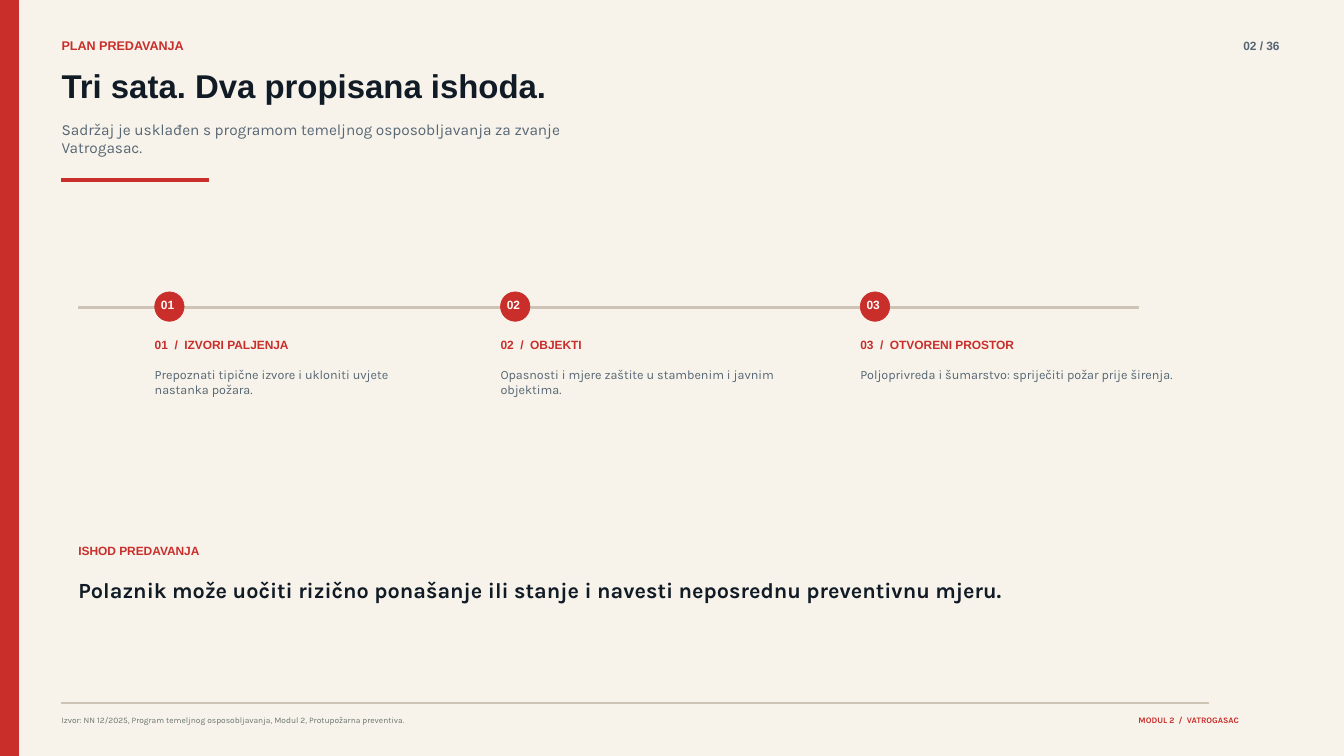
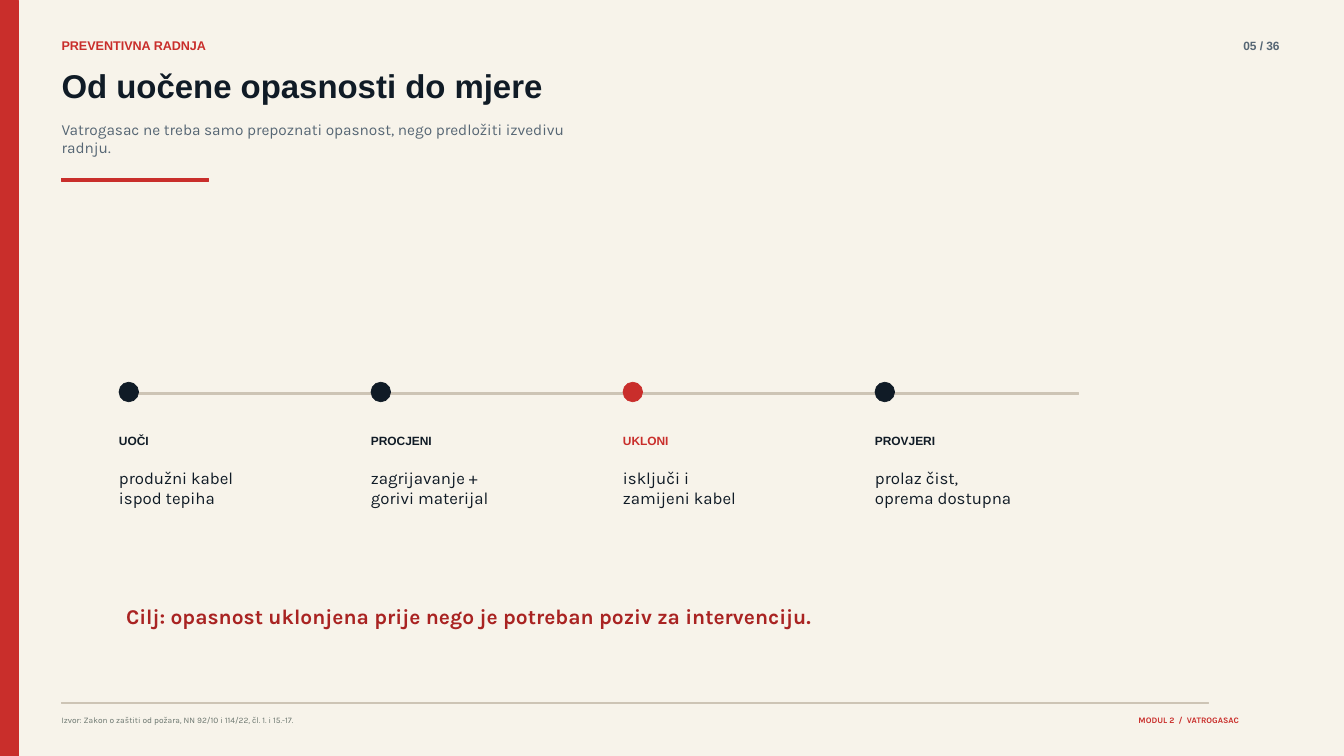
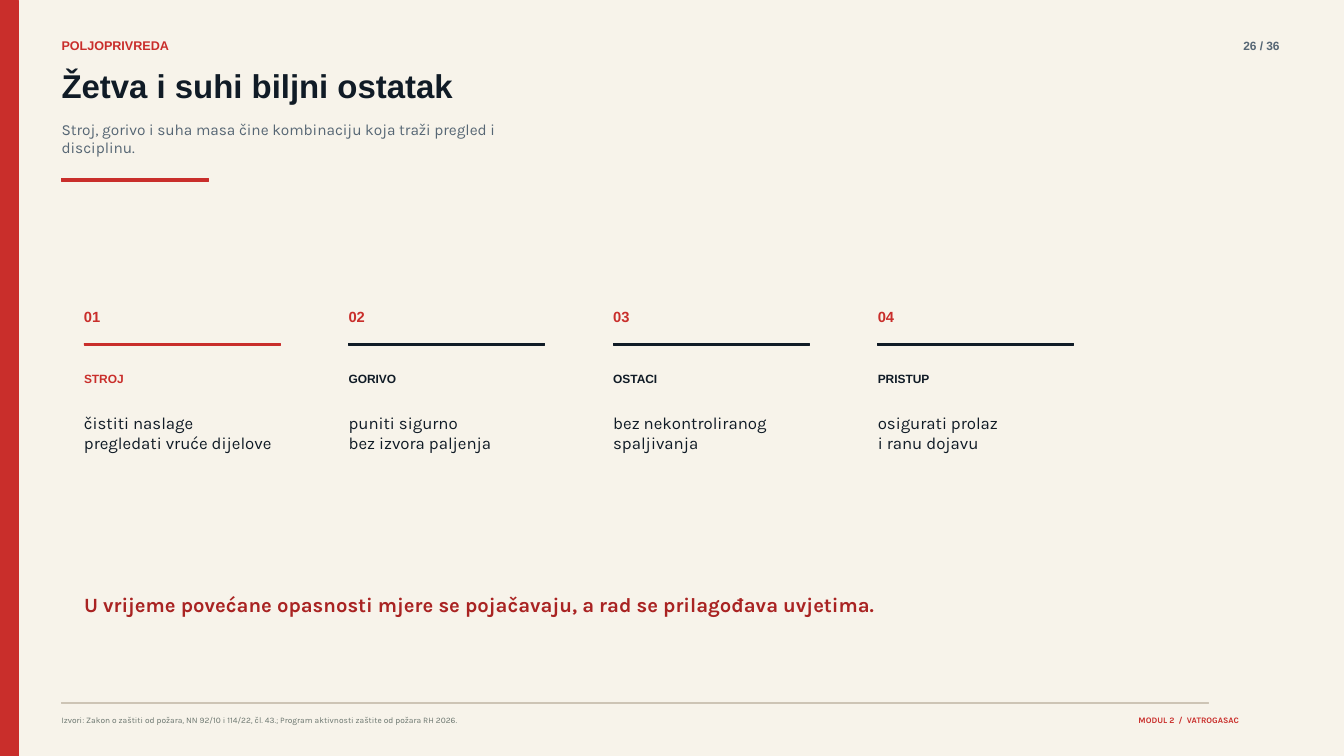
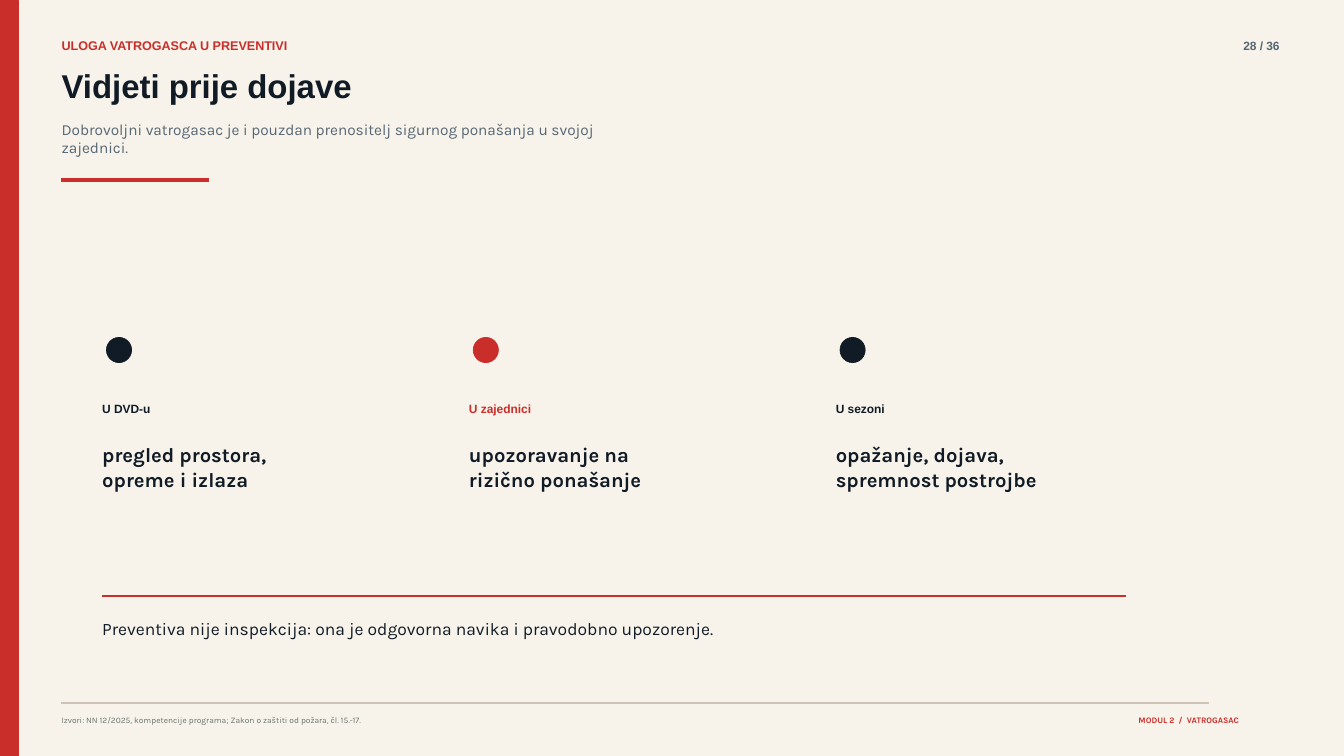
from pptx import Presentation
from pptx.dml.color import RGBColor
from pptx.enum.shapes import MSO_SHAPE
from pptx.enum.text import MSO_ANCHOR, MSO_AUTO_SIZE, PP_ALIGN
from pptx.util import Emu, Pt

EMU_PER_PX = 9525
WIDTH, HEIGHT = 1920, 1080
MARGIN = 88
SUBTITLE_TOP, SUBTITLE_HEIGHT = 171, 66
TITLE_ONLY = 5

RED = "C92E2B"
DARK_RED = "A92322"
INK = "101B26"
SLATE = "566674"
SAND = "CDC4B5"
SOURCE_GREY = "6A756E"
PAPER = "F7F3EA"
WHITE = "FCFBF8"

HEADING_FONT = "Arial"
BODY_FONT = "Karla"
LABEL_SIZE = 12.75


def px(length):
    return Emu(length * EMU_PER_PX)


def color(hex_string):
    return RGBColor.from_string(hex_string)


class Deck:
    """Holds the presentation, its style and the slide being built."""

    def __init__(self):
        self.presentation = Presentation()
        self.presentation.slide_width = px(WIDTH)
        self.presentation.slide_height = px(HEIGHT)
        self.slide = None

    def new_slide(self, number, kicker, title, subtitle, subtitle_width, source):
        """Start a slide with the shared band, header and footer."""
        layout = self.presentation.slide_layouts[TITLE_ONLY]
        self.slide = self.presentation.slides.add_slide(layout)
        background = self.slide.background.fill
        background.solid()
        background.fore_color.rgb = color(PAPER)

        self.shape(0, 0, 26, HEIGHT, RED)
        self.label(MARGIN, 54, 1150, 22, kicker, RED, 13.5)
        self.label(1688, 55, 140, 20, f"{number:02} / 36", SLATE, align=PP_ALIGN.RIGHT)
        self.title(title)
        self.text(MARGIN, SUBTITLE_TOP, subtitle_width, SUBTITLE_HEIGHT,
                  subtitle, 16.5, SLATE)
        self.shape(MARGIN, SUBTITLE_TOP + SUBTITLE_HEIGHT + 18, 210, 4, RED)

        self.shape(MARGIN, 1004, 1638, 1, SAND)
        self.text(MARGIN, 1022, 1410, 15, source, 9, SOURCE_GREY)
        self.text(1510, 1022, 260, 15, "MODUL 2  /  VATROGASAC", 9, RED,
                  bold=True, align=PP_ALIGN.RIGHT)

    def shape(self, left, top, width, height, fill, kind=MSO_SHAPE.RECTANGLE):
        shape = self.slide.shapes.add_shape(
            kind, px(left), px(top), px(width), px(height))
        shape.shadow.inherit = False
        shape.fill.solid()
        shape.fill.fore_color.rgb = color(fill)
        shape.line.color.rgb = color(fill)
        shape.line.width = 0

    def dot(self, left, top, diameter, fill):
        self.shape(left, top, diameter, diameter, fill, MSO_SHAPE.OVAL)

    def title(self, content):
        placeholder = self.slide.shapes.title
        placeholder.left, placeholder.top = px(MARGIN), px(94)
        placeholder.width, placeholder.height = px(1740), px(60)
        self.fill_frame(placeholder.text_frame, content, 35.25, INK,
                        HEADING_FONT, True, PP_ALIGN.LEFT)

    def text(self, left, top, width, height, content, size, ink,
             font=BODY_FONT, bold=False, align=PP_ALIGN.LEFT):
        box = self.slide.shapes.add_textbox(
            px(left), px(top), px(width), px(height))
        self.fill_frame(box.text_frame, content, size, ink, font, bold, align)

    def label(self, left, top, width, height, content, ink,
              size=LABEL_SIZE, align=PP_ALIGN.LEFT):
        self.text(left, top, width, height, content, size, ink,
                  HEADING_FONT, True, align)

    def fill_frame(self, frame, content, size, ink, font, bold, align):
        """Write each line of content as one paragraph in a frame without insets."""
        frame.word_wrap = True
        frame.auto_size = MSO_AUTO_SIZE.NONE
        frame.vertical_anchor = MSO_ANCHOR.TOP
        frame.margin_left = frame.margin_right = 0
        frame.margin_top = frame.margin_bottom = 0
        for index, line in enumerate(content.split("\n")):
            paragraph = frame.add_paragraph() if index else frame.paragraphs[0]
            paragraph.alignment = align
            run = paragraph.add_run()
            run.text = line
            run.font.name = font
            run.font.size = Pt(size)
            run.font.bold = bold
            run.font.color.rgb = color(ink)


def lecture_plan(deck):
    deck.new_slide(
        2, "PLAN PREDAVANJA", "Tri sata. Dva propisana ishoda.",
        "Sadržaj je usklađen s programom temeljnog osposobljavanja za zvanje Vatrogasac.",
        800,
        "Izvor: NN 12/2025, Program temeljnog osposobljavanja, Modul 2, Protupožarna preventiva.")
    topics = [
        (221, 390, 56, "IZVORI PALJENJA",
         "Prepoznati tipične izvore i ukloniti uvjete nastanka požara."),
        (715, 420, 56, "OBJEKTI",
         "Opasnosti i mjere zaštite u stambenim i javnim objektima."),
        (1229, 450, 28, "OTVORENI PROSTOR",
         "Poljoprivreda i šumarstvo: spriječiti požar prije širenja."),
    ]
    deck.shape(112, 438, 1514, 2, SAND)
    for number, (left, width, height, name, detail) in enumerate(topics, 1):
        deck.dot(left, 417, 42, RED)
        deck.label(left + 9, 425, 34, 21, f"{number:02}", WHITE)
        deck.label(left, 483, width, 21, f"{number:02}  /  {name}", RED)
        deck.text(left, 524, width, height, detail, 13.5, SLATE)
    deck.label(112, 776, 300, 21, "ISHOD PREDAVANJA", RED)
    deck.text(112, 824, 1430, 45,
              "Polaznik može uočiti rizično ponašanje ili stanje i navesti "
              "neposrednu preventivnu mjeru.", 23.25, INK, bold=True)


def hazard_to_measure(deck):
    deck.new_slide(
        5, "PREVENTIVNA RADNJA", "Od uočene opasnosti do mjere",
        "Vatrogasac ne treba samo prepoznati opasnost, nego predložiti izvedivu radnju.",
        771,
        "Izvor: Zakon o zaštiti od požara, NN 92/10 i 114/22, čl. 1. i 15.-17.")
    steps = [
        ("UOČI", "produžni kabel\nispod tepiha", INK),
        ("PROCJENI", "zagrijavanje +\ngorivi materijal", INK),
        ("UKLONI", "isključi i\nzamijeni kabel", RED),
        ("PROVJERI", "prolaz čist,\noprema dostupna", INK),
    ]
    deck.shape(180, 560, 1360, 3, SAND)
    for index, (name, example, accent) in enumerate(steps):
        left = 170 + 360 * index
        deck.dot(left, 546, 28, accent)
        deck.label(left, 620, 275, 21, name, accent)
        deck.text(left, 668, 275, 75, example, 18, INK)
    deck.text(180, 862, 1380, 44,
              "Cilj: opasnost uklonjena prije nego je potreban poziv za intervenciju.",
              22.5, DARK_RED, bold=True)


def harvest(deck):
    deck.new_slide(
        26, "POLJOPRIVREDA", "Žetva i suhi biljni ostatak",
        "Stroj, gorivo i suha masa čine kombinaciju koja traži pregled i disciplinu.",
        695,
        "Izvori: Zakon o zaštiti od požara, NN 92/10 i 114/22, čl. 43.; "
        "Program aktivnosti zaštite od požara RH 2026.")
    measures = [
        ("STROJ", "čistiti naslage\npregledati vruće dijelove", RED),
        ("GORIVO", "puniti sigurno\nbez izvora paljenja", INK),
        ("OSTACI", "bez nekontroliranog\nspaljivanja", INK),
        ("PRISTUP", "osigurati prolaz\ni ranu dojavu", INK),
    ]
    for index, (name, action, accent) in enumerate(measures):
        left = 120 + 378 * index
        deck.label(left, 440, 70, 26, f"{index + 1:02}", RED, 15.75)
        deck.shape(left, 490, 280, 3, accent)
        deck.label(left, 531, 286, 21, name, accent)
        deck.text(left, 590, 310, 75, action, 18, INK)
    deck.text(120, 846, 1420, 42,
              "U vrijeme povećane opasnosti mjere se pojačavaju, "
              "a rad se prilagođava uvjetima.", 21.75, DARK_RED, bold=True)


def firefighter_role(deck):
    deck.new_slide(
        28, "ULOGA VATROGASCA U PREVENTIVI", "Vidjeti prije dojave",
        "Dobrovoljni vatrogasac je i pouzdan prenositelj sigurnog ponašanja "
        "u svojoj zajednici.",
        830,
        "Izvori: NN 12/2025, kompetencije programa; Zakon o zaštiti od požara, čl. 15.-17.")
    roles = [
        ("U DVD-u", "pregled prostora,\nopreme i izlaza", INK),
        ("U zajednici", "upozoravanje na\nrizično ponašanje", RED),
        ("U sezoni", "opažanje, dojava,\nspremnost postrojbe", INK),
    ]
    for index, (place, duty, accent) in enumerate(roles):
        left = 146 + 524 * index
        deck.dot(left + 6, 482, 36, accent)
        deck.label(left, 574, 390, 21, place, accent)
        deck.text(left, 632, 398, 84, duty, 21.75, INK, bold=True)
    deck.shape(146, 850, 1462, 2, RED)
    deck.text(146, 883, 1460, 39,
              "Preventiva nije inspekcija: ona je odgovorna navika i pravodobno upozorenje.",
              18.75, INK)


def main():
    deck = Deck()
    for build_slide in (lecture_plan, hazard_to_measure, harvest, firefighter_role):
        build_slide(deck)
    deck.presentation.save("out.pptx")


if __name__ == "__main__":
    main()
